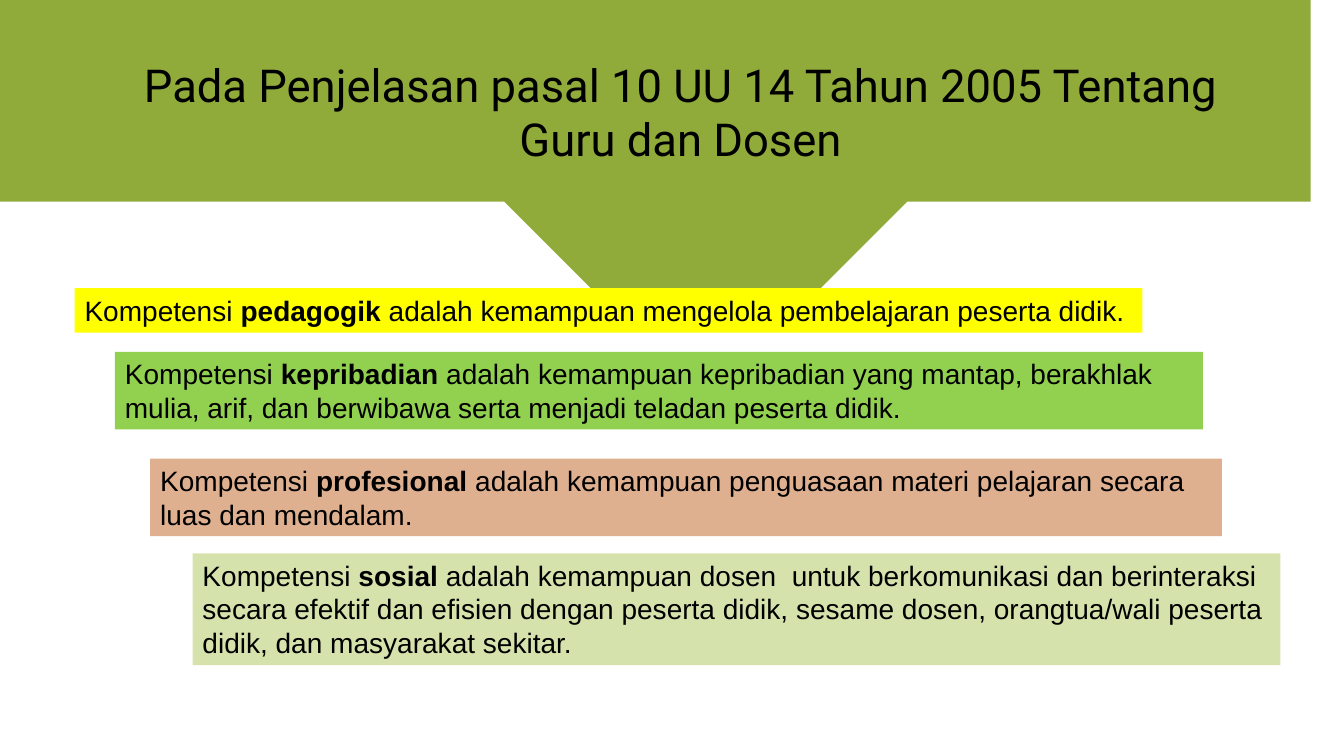
from pptx import Presentation
from pptx.dml.color import RGBColor
from pptx.enum.shapes import MSO_SHAPE as Shape
from pptx.enum.text import MSO_ANCHOR as Anchor, MSO_AUTO_SIZE as AutoSize, PP_ALIGN as Align
from pptx.util import Inches, Pt

BLACK = RGBColor(0x00, 0x00, 0x00)
WHITE = RGBColor(0xFF, 0xFF, 0xFF)
OLIVE = RGBColor(0x91, 0xAB, 0x3B)
YELLOW = RGBColor(0xFF, 0xFF, 0x00)
GREEN = RGBColor(0x92, 0xD0, 0x50)
TAN = RGBColor(0xDF, 0xB0, 0x90)
PALE_GREEN = RGBColor(0xD6, 0xE2, 0xAC)


def paint(shape, color):
    shape.shadow.inherit = False
    shape.fill.solid()
    shape.fill.fore_color.rgb = color
    shape.line.fill.background()


def add_run(paragraph, text, font_name, size, bold=False):
    run = paragraph.add_run()
    run.text = text
    run.font.name = font_name
    run.font.size = Pt(size)
    run.font.bold = bold
    run.font.color.rgb = BLACK


presentation = Presentation()
presentation.slide_width = Inches(13.33)
presentation.slide_height = Inches(7.5)
slide = presentation.slides.add_slide(presentation.slide_layouts[6])

backdrop = slide.shapes.add_shape(
    Shape.RECTANGLE, 0, 0, presentation.slide_width, presentation.slide_height)
paint(backdrop, WHITE)

right_edge = [(13.33, 0), (13.33, 1.9), (13.09, 1.95), (12.47, 2.06), (11.75, 2.18),
              (12.66, 2.1), (13.33, 2.02), (13.33, 2.09), (12.66, 2.16)]
lower_edge = [(11.62, 2.25), (10.72, 2.32), (10.11, 2.38), (9.55, 2.43), (8.82, 2.48),
              (8.37, 2.51), (7.76, 2.53), (7.14, 2.54), (6.76, 2.57), (6.54, 2.56),
              (5.87, 2.55), (4.8, 2.5), (4.2, 2.47), (3.36, 2.41), (2.76, 2.35),
              (2.04, 2.28), (1.36, 2.19), (0.89, 2.13), (0.38, 2.05), (0, 1.98)]
left_gap = [(0, 1.92), (0.54, 2.02), (1.04, 2.09), (1.47, 2.15), (2.06, 2.22),
            (2.64, 2.29), (3.26, 2.34), (4, 2.4), (4.54, 2.43), (5.04, 2.45),
            (4.57, 2.42), (4.03, 2.38), (3.39, 2.33), (2.84, 2.27), (2.29, 2.21),
            (1.58, 2.13), (1.11, 2.06), (0.65, 1.99), (0.22, 1.92), (0, 1.88)]
builder = slide.shapes.build_freeform(0, 0, scale=Inches(1))
builder.add_line_segments(right_edge + lower_edge + left_gap, close=True)
paint(builder.convert_to_shape(), OLIVE)

title = slide.shapes.add_textbox(Inches(1), Inches(0.37), Inches(11.5), Inches(1.47))
title.text_frame.word_wrap = True
title.text_frame.vertical_anchor = Anchor.MIDDLE
title_paragraph = title.text_frame.paragraphs[0]
title_paragraph.alignment = Align.CENTER
add_run(title_paragraph, "Pada Penjelasan pasal 10 UU 14 Tahun 2005 Tentang Guru dan Dosen",
        "Roboto", 32.4)

competencies = [
    (0.74, 2.86, 10.59, 0.44, YELLOW, "pedagogik ",
     "adalah kemampuan mengelola pembelajaran peserta didik."),
    (1.14, 3.49, 10.79, 0.77, GREEN, "kepribadian ",
     "adalah kemampuan kepribadian yang mantap, berakhlak mulia, arif, dan berwibawa "
     "serta menjadi teladan peserta didik."),
    (1.49, 4.55, 10.63, 0.77, TAN, "profesional ",
     "adalah kemampuan penguasaan materi pelajaran secara luas dan mendalam."),
    (1.91, 5.49, 10.79, 1.11, PALE_GREEN, "sosial ",
     "adalah kemampuan dosen  untuk berkomunikasi dan berinteraksi secara efektif dan "
     "efisien dengan peserta didik, sesame dosen, orangtua/wali peserta didik, "
     "dan masyarakat sekitar."),
]
for left, top, width, height, color, name, meaning in competencies:
    box = slide.shapes.add_shape(
        Shape.RECTANGLE, Inches(left), Inches(top), Inches(width), Inches(height))
    paint(box, color)
    frame = box.text_frame
    frame.word_wrap = True
    frame.auto_size = AutoSize.SHAPE_TO_FIT_TEXT
    frame.vertical_anchor = Anchor.TOP
    paragraph = frame.paragraphs[0]
    paragraph.alignment = Align.LEFT
    add_run(paragraph, "Kompetensi ", "Arial", 20)
    add_run(paragraph, name, "Arial", 20, bold=True)
    add_run(paragraph, meaning, "Arial", 20)

presentation.save("out.pptx")
